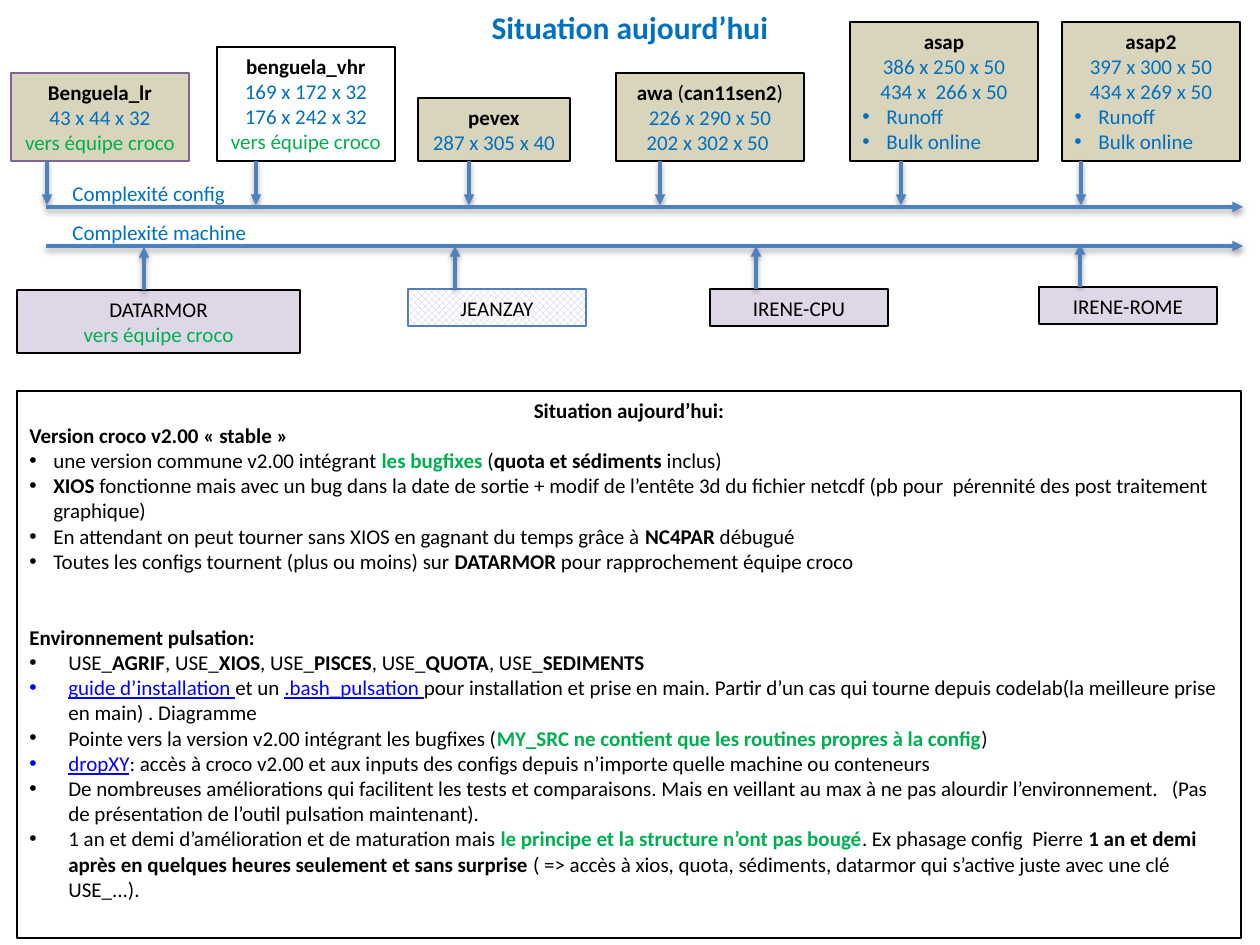
import pptx
import pptx.util
import pptx.dml.color
import pptx.enum.dml
import pptx.enum.shapes
import pptx.enum.text
import pptx.oxml
import pptx.oxml.ns

RGB = pptx.dml.color.RGBColor
ALIGN = pptx.enum.text.PP_ALIGN
BLACK = RGB(0x00, 0x00, 0x00)
WHITE = RGB(0xFF, 0xFF, 0xFF)
BLUE = RGB(0x00, 0x70, 0xC0)
GREEN = RGB(0x00, 0xB0, 0x50)
LINK = RGB(0x00, 0x00, 0xFF)
STEEL = RGB(0x4F, 0x81, 0xBD)
PURPLE = RGB(0x80, 0x64, 0xA2)
TAN = RGB(0xC4, 0xBD, 0x97)
LILAC = RGB(0xCC, 0xC1, 0xDA)

SCALE = 914400 / 126
NS = 'xmlns:a="http://schemas.openxmlformats.org/drawingml/2006/main"'

# run styles: bold, colour, underline
STYLES = {
    "plain": (False, BLACK, False),
    "bold": (True, BLACK, False),
    "blue": (False, BLUE, False),
    "green": (False, GREEN, False),
    "strong": (True, GREEN, False),
    "link": (False, LINK, True),
    "title": (True, BLUE, False),
}


def px(n):
    return pptx.util.Emu(round(n * SCALE))


def add_xml(node, text):
    node.append(pptx.oxml.parse_xml(text))


def write(frame, paras, size=12):
    """Fill a frame with (runs, format) pairs; runs are (text, style) pairs."""
    for i, (runs, form) in enumerate(paras):
        para = frame.paragraphs[0] if i == 0 else frame.add_paragraph()
        para.alignment = ALIGN.CENTER if form.get("center") else ALIGN.LEFT
        if "before" in form:
            para.space_before = pptx.util.Pt(form["before"])
        if "bullet" in form:
            props = para._p.get_or_add_pPr()
            props.set("marL", str(px(form["bullet"])))
            props.set("indent", str(-px(form["bullet"])))
            add_xml(props, f'<a:buFont {NS} typeface="Arial"/>')
            add_xml(props, f'<a:buChar {NS} char="•"/>')
        for text, style in runs:
            run = para.add_run()
            run.text = text
            bold, tint, under = STYLES[style]
            font = {"name": "Calibri", "size": pptx.util.Pt(size),
                    "bold": bold, "underline": under}
            for key, value in font.items():
                setattr(run.font, key, value)
            run.font.color.rgb = tint


def add_text(slide, box, paras, size=12, wrap=True):
    text = slide.shapes.add_textbox(*map(px, box))
    text.text_frame.word_wrap = wrap
    write(text.text_frame, paras, size)
    return text.text_frame


def add_box(slide, box, paras, tint, edge=BLACK):
    """Bordered box; a tint of None gives the checked pattern."""
    rect = slide.shapes.add_shape(
        pptx.enum.shapes.MSO_SHAPE.RECTANGLE, *map(px, box))
    rect.shadow.inherit = False
    rect.line.color.rgb = edge
    rect.line.width = pptx.util.Pt(0.75)
    if tint is None:
        rect.fill.patterned()
        rect.fill.pattern = pptx.enum.dml.MSO_PATTERN.LARGE_CHECKER_BOARD
        rect.fill.fore_color.rgb = LILAC
        rect.fill.back_color.rgb = WHITE
    else:
        rect.fill.solid()
        rect.fill.fore_color.rgb = tint
        node = rect._element.spPr.find(".//" + pptx.oxml.ns.qn("a:srgbClr"))
        add_xml(node, f'<a:alpha {NS} val="64000"/>')
    rect.text_frame.word_wrap = True
    rect.text_frame.vertical_anchor = pptx.enum.text.MSO_ANCHOR.TOP
    write(rect.text_frame, paras)


def add_arrow(slide, *ends):
    arrow = slide.shapes.add_connector(
        pptx.enum.shapes.MSO_CONNECTOR.STRAIGHT, *map(px, ends))
    arrow.line.color.rgb = STEEL
    arrow.line.width = pptx.util.Pt(2)
    add_xml(arrow.line._get_or_add_ln(), f'<a:tailEnd {NS} type="triangle"/>')
    add_xml(arrow._element.spPr,
            f'<a:effectLst {NS}><a:outerShdw blurRad="40000" dist="20000" '
            'dir="5400000" rotWithShape="0"><a:srgbClr val="000000">'
            '<a:alpha val="38000"/></a:srgbClr></a:outerShdw></a:effectLst>')


def mid(*runs):
    return runs, {"center": True}


def dot(step, *runs):
    return runs, {"bullet": step}


def high(paras):
    return round(12 + 25.4 * len(paras))


def add_axis(slide, box, label):
    """Long arrow along the bottom of the box, with its label above."""
    left, top, wide, tall = box
    add_arrow(slide, left, top + tall, left + wide, top + tall)
    add_text(slide, (left + 14, top, 200, 38), [([(label, "blue")], {})],
             wrap=False)


def add_configs(slide, base, axis):
    """Config boxes standing on base, each with an arrow down to the axis."""
    team = mid(("vers équipe croco", "green"))
    extra = [dot(24, (word, "blue")) for word in ("Runoff", "Bulk online")]
    awa = [("awa", "bold"), (" (", "plain"), ("can11sen2", "bold"),
           (")", "plain")]
    rows = [
        (11, 178, 47, [("Benguela_lr", "bold")], ["43 x 44 x 32"],
         [team], TAN, PURPLE),
        (217, 178, 256, [("benguela_vhr", "bold")],
         ["169 x 172 x 32", "176 x 242 x 32"], [team], WHITE, BLACK),
        (418, 152, 469, [("pevex", "bold")], ["287 x 305 x 40"],
         [], TAN, BLACK),
        (616, 188, 660, awa, ["226 x 290 x 50", "202 x 302 x 50 "],
         [], TAN, BLACK),
        (850, 188, 901, [("asap", "bold")],
         ["386 x 250 x 50", "434 x  266 x 50"], extra, TAN, BLACK),
        (1062, 178, 1081, [("asap2", "bold")],
         ["397 x 300 x 50", "434 x 269 x 50"], extra, TAN, BLACK),
    ]
    for left, wide, stem, name, sizes, more, tint, edge in rows:
        paras = [mid(*name), *[mid((s, "blue")) for s in sizes], *more]
        tall = high(paras)
        add_box(slide, (left, base - tall, wide, tall), paras, tint, edge)
        add_arrow(slide, stem, base, stem, axis - 2)


def add_hosts(slide, top, axis):
    """Machine boxes below the axis, each with an arrow up to it."""
    rows = [
        (17, 283, 144, 1, "DATARMOR", ["vers équipe croco"], LILAC, BLACK),
        (408, 178, 455, 0, "JEANZAY", [], None, STEEL),
        (710, 178, 756, 0, "IRENE-CPU", [], LILAC, BLACK),
        (1039, 178, 1080, -2, "IRENE-ROME", [], LILAC, BLACK),
    ]
    for left, wide, stem, drop, name, more, tint, edge in rows:
        paras = [mid((name, "plain")), *[mid((m, "green")) for m in more]]
        add_box(slide, (left, top + drop, wide, high(paras)), paras, tint, edge)
        add_arrow(slide, stem, top + drop, stem, axis + drop)


def add_notes(slide, box):
    """Framed summary of the version and of the environment."""
    flags = []
    for i, flag in enumerate(("AGRIF", "XIOS", "PISCES", "QUOTA", "SEDIMENTS")):
        flags += [(", USE_" if i else "USE_", "plain"), (flag, "bold")]
    paras = [
        mid(("Situation aujourd’hui:", "bold")),
        ([("Version croco v2.00 « stable »", "bold")], {}),
        dot(24, ("une version commune v2.00 intégrant ", "plain"),
            ("les bugfixes ", "strong"), ("(", "plain"),
            ("quota et sédiments", "bold"), (" inclus)", "plain")),
        dot(24, ("XIOS", "bold"),
            (" fonctionne mais avec un bug dans la date de sortie + modif de "
             "l’entête 3d du fichier netcdf (pb pour  pérennité des post "
             "traitement graphique)", "plain")),
        dot(24, ("En attendant on peut tourner sans XIOS en gagnant du temps "
                 "grâce à ", "plain"),
            ("NC4PAR", "bold"), (" débugué", "plain")),
        dot(24, ("Toutes les configs tournent (plus ou moins) sur ", "plain"),
            ("DATARMOR", "bold"), (" pour rapprochement équipe croco", "plain")),
        ([("Environnement pulsation:", "bold")], {"before": 29}),
        dot(39, *flags),
        dot(39, ("guide d’installation ", "link"), ("et un ", "plain"),
            (".bash_pulsation ", "link"),
            ("pour installation et prise en main. Partir d’un cas qui tourne "
             "depuis codelab(la meilleure prise en main) . Diagramme", "plain")),
        dot(39, ("Pointe vers la version v2.00 intégrant les bugfixes (",
                 "plain"),
            ("MY_SRC ne contient que les routines propres à la config",
             "strong"), (")", "plain")),
        dot(39, ("dropXY", "link"),
            (": accès à croco v2.00 et aux inputs des configs depuis "
             "n’importe quelle machine ou conteneurs", "plain")),
        dot(39, ("De nombreuses améliorations qui facilitent les tests et "
                 "comparaisons. Mais en veillant au max à ne pas alourdir "
                 "l’environnement.   (Pas de présentation de l’outil "
                 "pulsation maintenant).", "plain")),
        dot(39, ("1 an et demi d’amélioration et de maturation mais ", "plain"),
            ("le principe et la structure n’ont pas bougé", "strong"),
            (". Ex phasage config  Pierre ", "plain"),
            ("1 an et demi après en quelques heures seulement et sans "
             "surprise ", "bold"),
            ("( => accès à xios, quota, sédiments, datarmor qui s’active "
             "juste avec une clé USE_...).", "plain")),
    ]
    add_box(slide, box, paras, WHITE)


def main():
    deck = pptx.Presentation()
    deck.slide_width, deck.slide_height = px(1260), px(945)
    slide = deck.slides.add_slide(deck.slide_layouts[6])
    head = add_text(slide, (0, 0, 1260, 54),
                    [mid(("Situation aujourd’hui", "title"))], 18)
    head.vertical_anchor = pptx.enum.text.MSO_ANCHOR.MIDDLE
    add_configs(slide, 161, 207)
    add_axis(slide, (46, 174, 1197, 33), "Complexité config")
    add_axis(slide, (46, 213, 1197, 33), "Complexité machine")
    add_hosts(slide, 289, 246)
    add_notes(slide, (17, 391, 1224, 547))
    deck.save("out.pptx")


if __name__ == "__main__":
    main()
